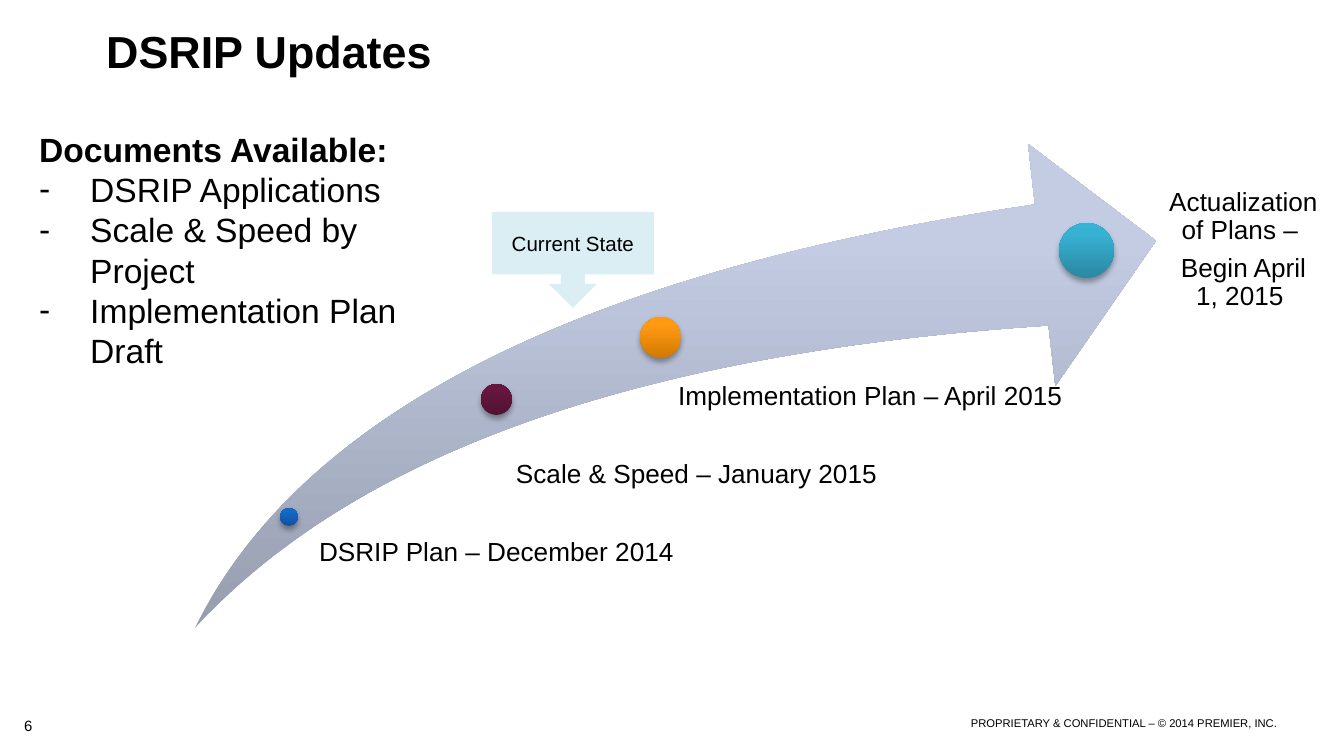
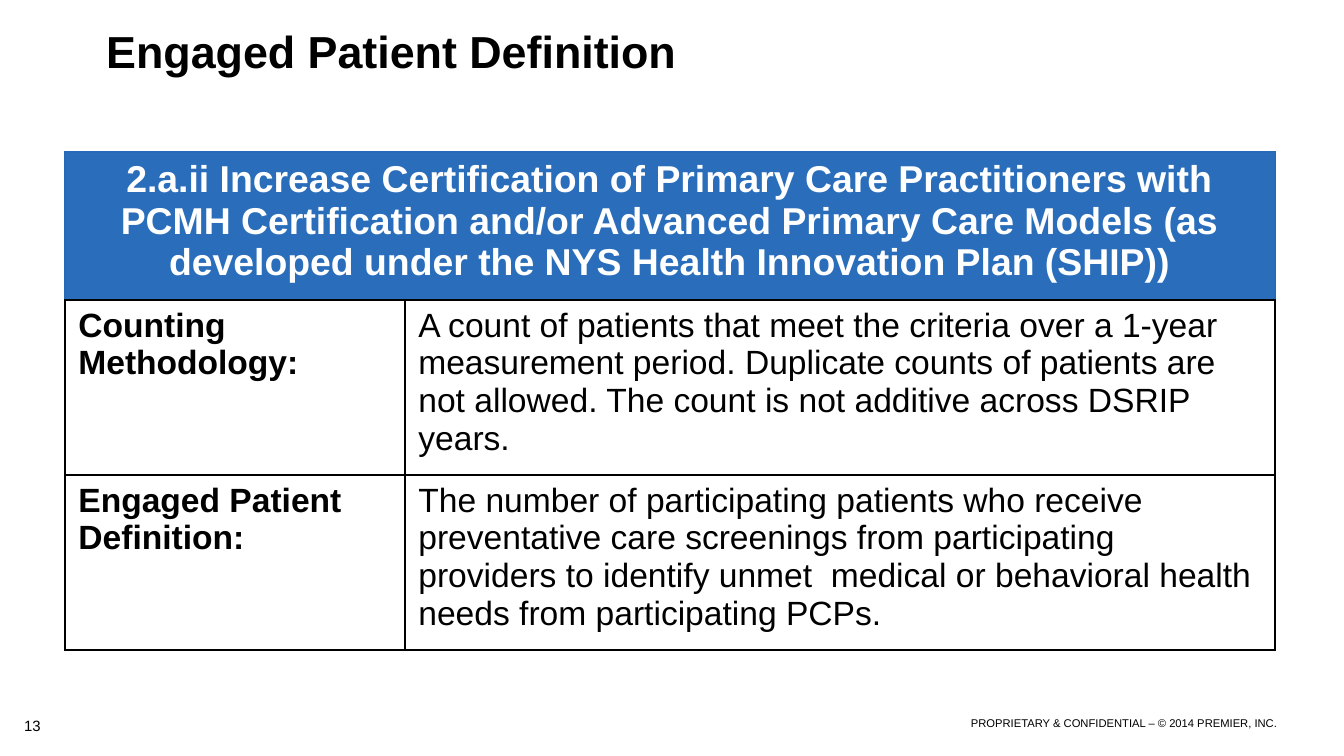
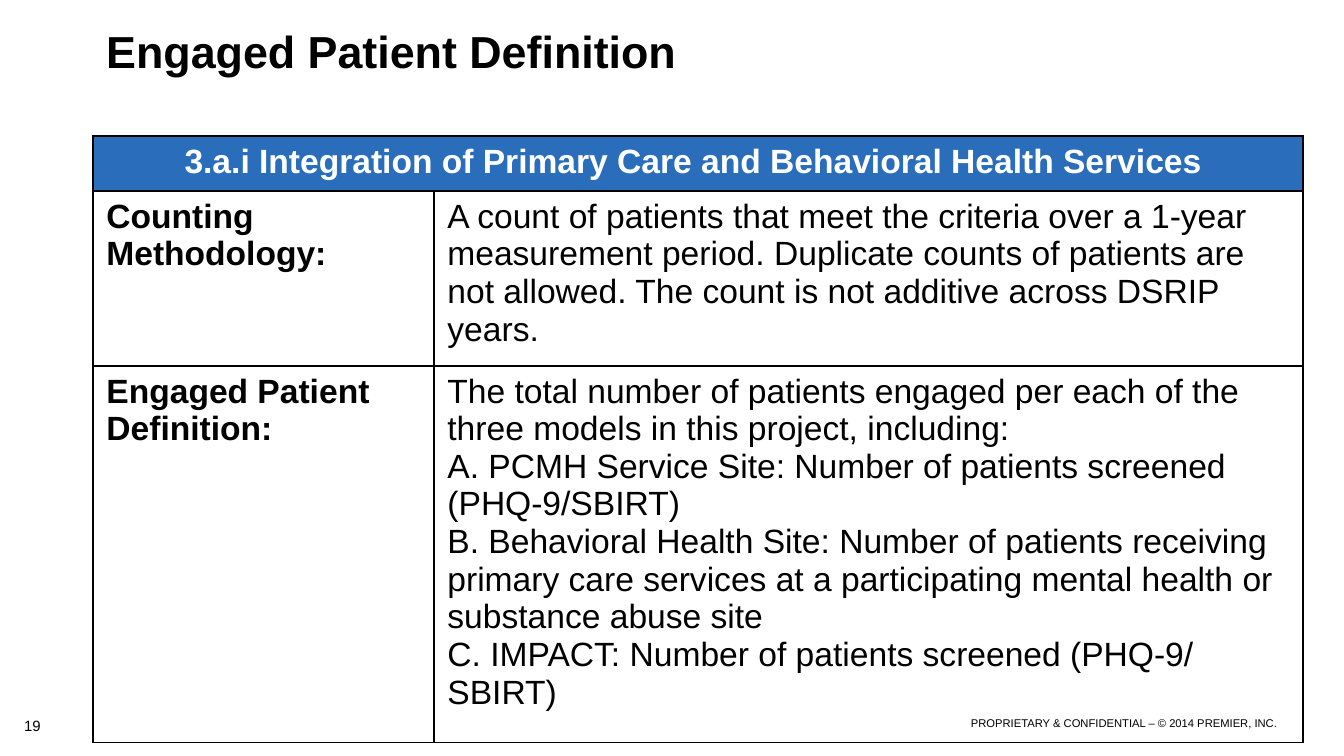
from dataclasses import dataclass, field
from typing import Any, NamedTuple

from lxml.etree import SubElement
from pptx import Presentation
from pptx.dml.color import RGBColor
from pptx.enum.shapes import MSO_SHAPE
from pptx.enum.text import MSO_ANCHOR, PP_ALIGN
from pptx.oxml.ns import qn
from pptx.util import Emu, Pt

SCALE = 914400 / 134.4


def px(count: int) -> Emu:
    return Emu(round(count * SCALE))


class Box(NamedTuple):
    left: int
    top: int
    width: int
    height: int

    def size(self) -> list[Emu]:
        return [px(side) for side in self]


class Look(NamedTuple):
    size: int
    bold: bool = False
    color: str = "000000"


@dataclass(frozen=True)
class Theme:
    font: str = "Arial"
    black: str = "000000"
    head: str = "2A6EBB"
    edge: str = "266BBA"
    note: str = "DBEEF4"
    swoosh: tuple[str, ...] = ("969DAF", "C3CCE3", "C3CDE5")
    title: Look = Look(24, True)
    strong: Look = Look(18, True)
    body: Look = Look(18)
    label: Look = Look(14)
    small: Look = Look(11)
    number: Look = Look(8)
    footer: Look = Look(6)
    white: str = "FFFFFF"


THEME = Theme()


@dataclass(frozen=True)
class Line:
    text: str
    look: Look
    form: dict[str, Any] = field(default_factory=dict)
    bullet: str = ""


@dataclass(frozen=True)
class Step:
    dot: Box
    shades: tuple[str, ...]
    box: Box
    inset: int
    texts: tuple[str, ...]
    align: Any = PP_ALIGN.LEFT


@dataclass(frozen=True)
class Grid:
    page: int
    left: int
    top: int
    cols: tuple[int, ...]
    rows: tuple[int, ...]
    head: Line
    edge: str
    engaged: tuple[str, ...]


STEPS = (
    Step(Box(280, 508, 18, 18), ("0F519C", "1469CA", "106ACF"),
         Box(310, 539, 484, 36), 9, ("DSRIP Plan – December 2014",)),
    Step(Box(481, 384, 31, 31), ("501131", "67173F", "69153F"),
         Box(500, 461, 473, 46), 16, ("Scale & Speed – January 2015",)),
    Step(Box(640, 317, 41, 41), ("D27900", "FF9A12", "FF9B14"),
         Box(656, 383, 435, 55), 22, ("Implementation Plan – April 2015",)),
    Step(Box(1059, 223, 55, 55), ("2A88A2", "37B1D2", "34B4D6"),
         Box(1138, 189, 181, 192), 30,
         ("Actualization of Plans – ", "Begin April 1, 2015 "), PP_ALIGN.CENTER),
)

PAPERS = ("DSRIP Applications", "Scale & Speed by Project", "Implementation Plan Draft")

COUNT = (
    "A count of patients that meet the criteria over a 1-year measurement period. "
    "Duplicate counts of patients are not allowed. "
    "The count is not additive across DSRIP years."
)

CENTER = {"alignment": PP_ALIGN.CENTER}

GRIDS = (
    Grid(13, 65, 152, (340, 870), (148, 175, 175),
         Line("2.a.ii Increase Certification of Primary Care Practitioners with PCMH "
              "Certification and/or Advanced Primary Care Models (as developed under "
              "the NYS Health Innovation Plan (SHIP))",
              Look(20, True, THEME.white), CENTER),
         THEME.edge,
         ("The number of participating patients who receive preventative care "
          "screenings from participating providers to identify unmet  medical or "
          "behavioral health needs from participating PCPs.",)),
    Grid(19, 93, 136, (341, 869), (55, 175, 376),
         Line("3.a.i Integration of Primary Care and Behavioral Health Services ",
              Look(18, True, THEME.white), CENTER),
         THEME.black,
         ("The total number of patients engaged per each of the three models in this "
          "project, including: \n"
          "A. PCMH Service Site: Number of patients screened (PHQ-9/SBIRT) \n"
          "B. Behavioral Health Site: Number of patients receiving primary care "
          "services at a participating mental health or substance abuse site",
          "C. IMPACT: Number of patients screened (PHQ-9/ SBIRT)")),
)


def apply(target: Any, form: dict[str, Any]) -> None:
    for name, value in form.items():
        setattr(target, name, value)


def add_mark(para: Any, mark: str) -> None:
    props = para._p.get_or_add_pPr()
    props.set("marL", str(px(51)))
    props.set("indent", str(-px(51)))
    SubElement(props, qn("a:buFont"), typeface=THEME.font)
    SubElement(props, qn("a:buChar"), char=mark)


def write(frame: Any, lines: list[Line], form: dict[str, Any] | None = None) -> None:
    apply(frame, form or {})
    for spot, line in enumerate(lines):
        para = frame.add_paragraph() if spot else frame.paragraphs[0]
        para.text = line.text
        if line.bullet:
            add_mark(para, line.bullet)
        apply(para, line.form)
        look = line.look
        for run in para.runs:
            apply(run.font, {"name": THEME.font, "size": Pt(look.size), "bold": look.bold})
            run.font.color.rgb = RGBColor.from_string(look.color)


def add_text(slide: Any, box: Box, lines: list[Line], form: dict[str, Any] | None = None) -> None:
    frame = slide.shapes.add_textbox(*box.size()).text_frame
    write(frame, lines, {"word_wrap": True, **(form or {})})


def add_form(slide: Any, kind: Any, box: Box) -> Any:
    shape = slide.shapes.add_shape(kind, *box.size())
    shape.shadow.inherit = False
    shape.line.fill.background()
    return shape


def add_color(parent: Any, color: str) -> Any:
    return SubElement(parent, qn("a:srgbClr"), val=color)


def add_blend(shape: Any, shades: tuple[str, ...]) -> None:
    props = shape._element.spPr
    blend = SubElement(props, qn("a:gradFill"))
    stops = SubElement(blend, qn("a:gsLst"))
    for place, shade in zip((0, 80, 100), shades):
        add_color(SubElement(stops, qn("a:gs"), pos=str(place * 1000)), shade)
    SubElement(blend, qn("a:lin"), ang="16200000", scaled="0")
    props.find(qn("a:prstGeom")).addnext(blend)


def add_shade(shape: Any) -> None:
    group = shape._element.spPr.find(qn("a:effectLst"))
    shade = SubElement(group, qn("a:outerShdw"), blurRad=str(Pt(3.1)),
                       dist=str(Pt(1.8)), dir="5400000", rotWithShape="0")
    SubElement(add_color(shade, THEME.black), qn("a:alpha"), val="35000")


def add_page(deck: Any, page: int, title: str) -> Any:
    slide = deck.slides.add_slide(deck.slide_layouts[6])
    add_text(slide, Box(11, 710, 56, 50), [Line(str(page), THEME.number)])
    add_text(slide, Box(950, 710, 340, 27),
             [Line("PROPRIETARY & CONFIDENTIAL – © 2014 PREMIER, INC.", THEME.footer,
                   {"alignment": PP_ALIGN.RIGHT})])
    add_text(slide, Box(93, 15, 1210, 71), [Line(title, THEME.title)],
             {"vertical_anchor": MSO_ANCHOR.MIDDLE})
    return slide


def add_step(slide: Any, step: Step) -> None:
    dot = add_form(slide, MSO_SHAPE.OVAL, step.dot)
    add_blend(dot, step.shades)
    add_shade(dot)
    form = {"alignment": step.align, "line_spacing": 0.9, "space_after": Pt(5)}
    add_text(slide, step.box, [Line(text, THEME.label, form) for text in step.texts],
             {"margin_left": px(step.inset), "margin_top": 0,
              "margin_right": 0, "margin_bottom": 0})


def draw_path(deck: Any) -> None:
    slide = add_page(deck, 6, "DSRIP Updates")
    swoosh = add_form(slide, MSO_SHAPE.SWOOSH_ARROW, Box(195, 144, 961, 484))
    swoosh.adjustments[0] = 0.25
    swoosh.adjustments[1] = 0.25
    add_blend(swoosh, THEME.swoosh)
    for step in STEPS:
        add_step(slide, step)
    add_text(slide, Box(26, 122, 422, 258),
             [Line("Documents Available:", THEME.strong)]
             + [Line(paper, THEME.body, bullet="-") for paper in PAPERS])
    note = add_form(slide, MSO_SHAPE.DOWN_ARROW_CALLOUT, Box(492, 212, 162, 96))
    note.fill.solid()
    note.fill.fore_color.rgb = RGBColor.from_string(THEME.note)
    write(note.text_frame, [Line("Current State", THEME.small, CENTER)],
          {"word_wrap": True, "vertical_anchor": MSO_ANCHOR.MIDDLE})


def add_edges(cell: Any, color: str) -> None:
    props = cell._tc.get_or_add_tcPr()
    for side in "LRTB":
        shown = THEME.black if side == "B" else color
        width = Pt(1 if shown == THEME.black else 0.75)
        edge = SubElement(props, qn(f"a:ln{side}"), w=str(width))
        add_color(SubElement(edge, qn("a:solidFill")), shown)


def draw_grid(deck: Any, grid: Grid) -> None:
    slide = add_page(deck, grid.page, "Engaged Patient Definition")
    box = Box(grid.left, grid.top, sum(grid.cols), sum(grid.rows))
    table = slide.shapes.add_table(len(grid.rows), len(grid.cols), *box.size()).table
    apply(table, {"first_row": False, "horz_banding": False})
    for col, width in zip(table.columns, grid.cols):
        col.width = px(width)
    for row, height in zip(table.rows, grid.rows):
        row.height = px(height)
    table.cell(0, 0).merge(table.cell(0, 1))
    texts = (
        ([grid.head], []),
        ([Line("Counting Methodology:", THEME.strong)], [Line(COUNT, THEME.body)]),
        ([Line("Engaged Patient Definition:", THEME.strong)],
         [Line(text, THEME.body) for text in grid.engaged]),
    )
    for rank, pair in enumerate(texts):
        for spot, lines in enumerate(pair):
            cell = table.cell(rank, spot)
            add_edges(cell, THEME.black if rank else grid.edge)
            if rank:
                cell.fill.background()
            else:
                cell.fill.solid()
                cell.fill.fore_color.rgb = RGBColor.from_string(THEME.head)
            write(cell.text_frame, lines)


def main() -> None:
    deck = Presentation()
    apply(deck, {"slide_width": px(1344), "slide_height": px(756)})
    draw_path(deck)
    for grid in GRIDS:
        draw_grid(deck, grid)
    deck.save("out.pptx")


if __name__ == "__main__":
    main()
